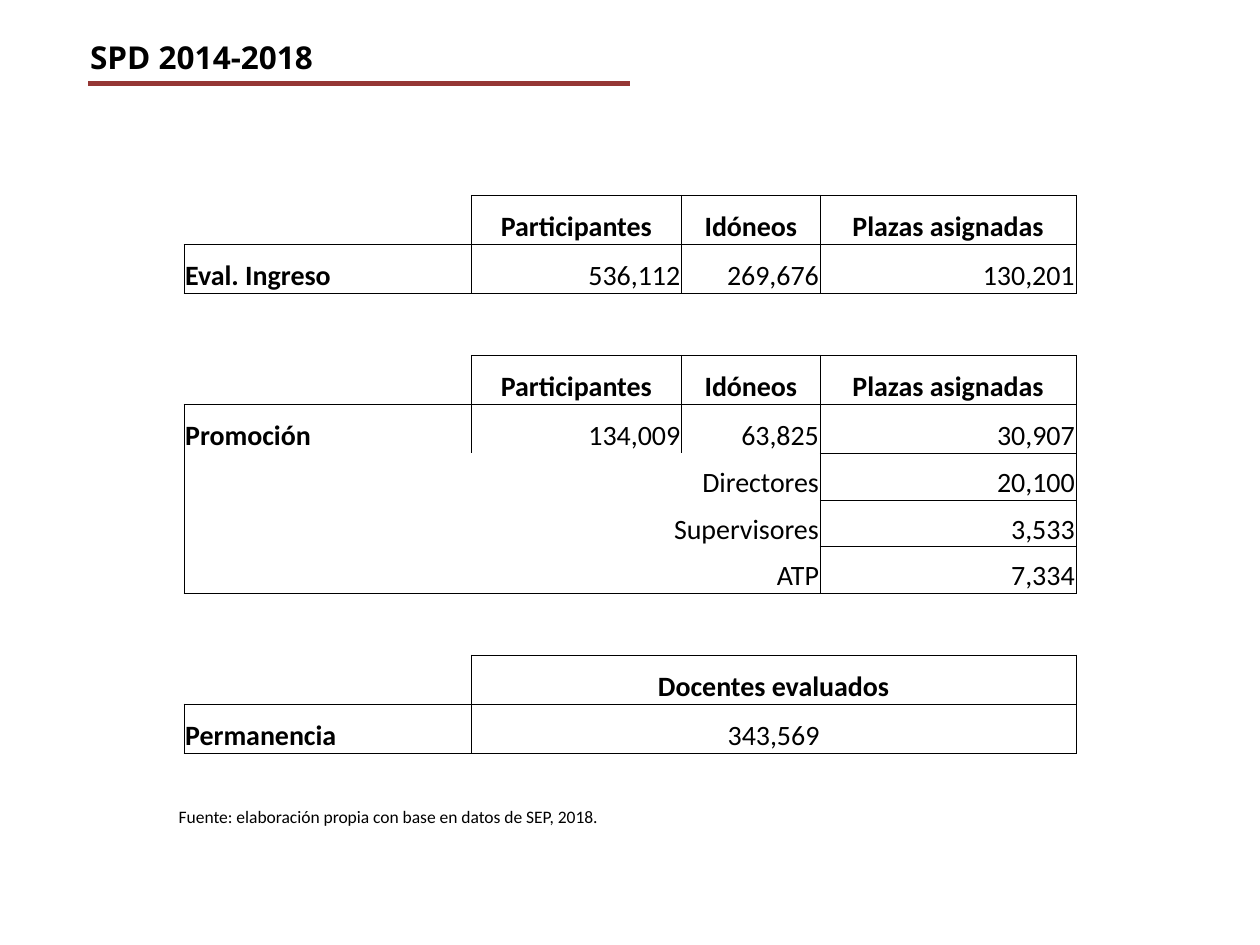
import lxml.etree
import pptx
import pptx.dml.color
import pptx.enum.shapes
import pptx.enum.text
import pptx.oxml.ns
import pptx.util

Inches, Pt = pptx.util.Inches, pptx.util.Pt
ALIGN = pptx.enum.text.PP_ALIGN
ANCHOR = pptx.enum.text.MSO_ANCHOR
qn = pptx.oxml.ns.qn

COLORS = {"text": "000000", "rule": "953735", "cell": "FFFFFF"}

TITLE = " SPD 2014-2018"
SOURCE = "Fuente: elaboración propia con base en datos de SEP, 2018."

COLUMN_WIDTHS = [2.28, 1.67, 1.1, 2.03]
ROW_HEIGHTS = {"header": 0.39, "data": 0.39, "open data": 0.39, "gap": 0.49,
               "detail": 0.37, "last detail": 0.37}
HEADINGS = ["", "Participantes", "Idóneos", "Plazas asignadas"]
# A None cell is merged into the one on its left.
ROWS = [
    ("header", HEADINGS),
    ("data", ["Eval. Ingreso", "536,112", "269,676", "130,201"]),
    ("gap", [""] * 4),
    ("header", HEADINGS),
    ("open data", ["Promoción", "134,009", "63,825", "30,907"]),
    ("detail", ["Directores", None, None, "20,100"]),
    ("detail", ["Supervisores", None, None, "3,533"]),
    ("last detail", ["ATP", None, None, "7,334"]),
    ("gap", [""] * 4),
    ("header", ["", "Docentes evaluados", None, None]),
    ("data", ["Permanencia", "343,569", None, None]),
]
# Bordered sides of the cells in each column: Left, Right, Top, Bottom.
BORDERS = {
    "header": ["RB", "LRTB", "LRTB", "LRTB"],
    "data": ["LRTB"] * 4,
    "open data": ["LRT", "LRT", "LRT", "LRTB"],
    "gap": ["T", "TB", "TB", "TB"],
    "detail": ["LR", "LR", "LR", "LRTB"],
    "last detail": ["LRB", "LRB", "LRB", "LRTB"],
}


def rgb(name):
    return pptx.dml.color.RGBColor.from_string(COLORS[name])


def write(frame, text, size=16, font="Calibri", bold=False, align=ALIGN.LEFT):
    paragraph = frame.paragraphs[0]
    paragraph.alignment = align
    run = paragraph.add_run()
    run.text = text
    run.font.size = Pt(size)
    run.font.name = font
    run.font.bold = bold
    run.font.color.rgb = rgb("text")


def set_borders(cell, sides):
    """Draw thin lines on the given sides and none on the others."""
    properties = cell._tc.get_or_add_tcPr()
    for side in "LRTB":
        line = lxml.etree.SubElement(properties, qn(f"a:ln{side}"), w=str(Pt(0.5)))
        if side in sides:
            fill = lxml.etree.SubElement(line, qn("a:solidFill"))
            lxml.etree.SubElement(fill, qn("a:srgbClr"), val=COLORS["text"])
        else:
            lxml.etree.SubElement(line, qn("a:noFill"))


def cell_format(kind, column, merged):
    if kind == "header":
        return {"bold": True, "align": ALIGN.CENTER}
    if "detail" not in kind and column == 0:
        return {"bold": True}
    if kind == "data" and merged:
        return {"align": ALIGN.CENTER}
    return {"align": ALIGN.RIGHT}


def add_title(slide):
    title = slide.shapes.title
    title.left, title.top = Inches(0.55), Inches(0.23)
    title.width, title.height = Inches(6.49), Inches(0.42)
    title.text_frame.auto_size = pptx.enum.text.MSO_AUTO_SIZE.NONE
    title.text_frame.vertical_anchor = ANCHOR.BOTTOM
    write(title.text_frame, TITLE, size=18, font="Noto Sans", bold=True)

    rule = slide.shapes.add_connector(
        pptx.enum.shapes.MSO_CONNECTOR.STRAIGHT,
        Inches(0.7), Inches(0.66), Inches(5), Inches(0.66))
    rule.line.color.rgb = rgb("rule")
    rule.line.width = Pt(3)
    lxml.etree.SubElement(rule._element.spPr, qn("a:effectLst"))


def add_results(slide):
    heights = [ROW_HEIGHTS[kind] for kind, _ in ROWS]
    results = slide.shapes.add_table(
        len(ROWS), len(COLUMN_WIDTHS), Inches(1.46), Inches(1.55),
        Inches(sum(COLUMN_WIDTHS)), Inches(sum(heights))).table
    results.first_row = results.horz_banding = False
    for column, width in zip(results.columns, COLUMN_WIDTHS):
        column.width = Inches(width)
    for row, height in zip(results.rows, heights):
        row.height = Inches(height)

    for r, (kind, texts) in enumerate(ROWS):
        for c, text in enumerate(texts):
            cell = results.cell(r, c)
            cell.margin_left = cell.margin_right = cell.margin_top = Inches(0.01)
            cell.margin_bottom = 0
            cell.vertical_anchor = ANCHOR.BOTTOM
            set_borders(cell, BORDERS[kind][c])
            cell.fill.solid()
            cell.fill.fore_color.rgb = rgb("cell")
            if text:
                write(cell.text_frame, text, **cell_format(kind, c, None in texts))
        if None in texts:
            first = texts.index(None) - 1
            last = first + texts.count(None)
            results.cell(r, first).merge(results.cell(r, last))


def add_source(slide):
    source = slide.shapes.add_textbox(
        Inches(1.32), Inches(6.35), Inches(7.35), Inches(0.27))
    source.text_frame.word_wrap = True
    write(source.text_frame, SOURCE, size=10)


def main():
    deck = pptx.Presentation()
    deck.slide_width, deck.slide_height = Inches(10), Inches(7.5)
    slide = deck.slides.add_slide(deck.slide_layouts.get_by_name("Title Only"))
    add_title(slide)
    add_results(slide)
    add_source(slide)
    deck.save("out.pptx")


if __name__ == "__main__":
    main()
